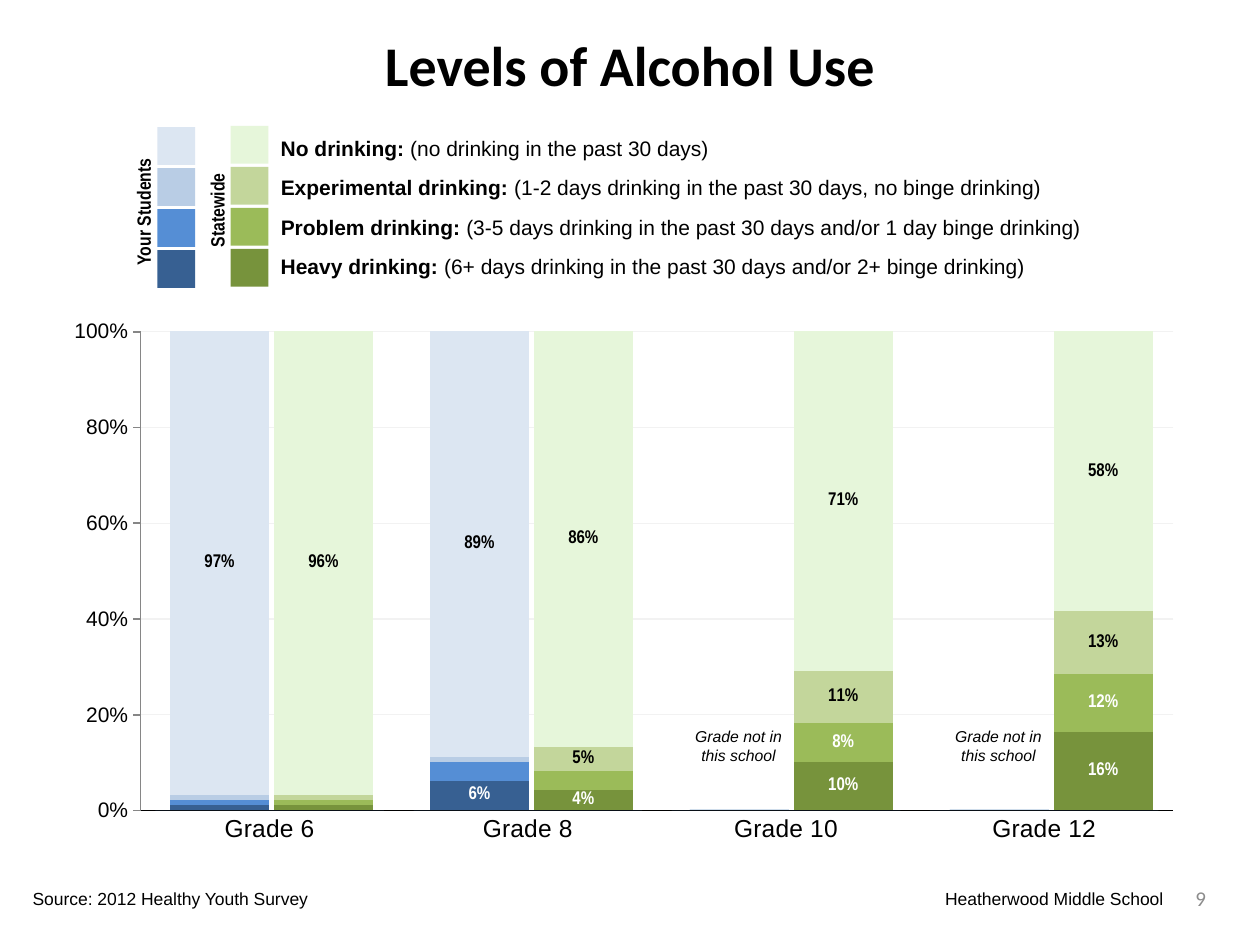
from dataclasses import dataclass

from lxml.etree import SubElement
from pptx import Presentation
from pptx.chart.data import CategoryChartData
from pptx.dml.color import RGBColor
from pptx.enum.chart import XL_CHART_TYPE, XL_LABEL_POSITION, XL_TICK_LABEL_POSITION, XL_TICK_MARK
from pptx.enum.shapes import MSO_SHAPE
from pptx.enum.text import MSO_ANCHOR, PP_ALIGN
from pptx.oxml import parse_xml
from pptx.oxml.ns import nsdecls, qn
from pptx.util import Inches, Pt

CELL = Inches(0.1)


@dataclass(frozen=True)
class Theme:
    ink: str = "000000"
    paper: str = "FFFFFF"
    grid: str = "F2F2F2"
    axis: str = "868686"
    number: str = "8C8C8C"
    heading: str = "Calibri"
    body: str = "Arial"
    narrow: str = "Arial Narrow"
    title_size: float = 32
    category_size: float = 14
    text_size: float = 12
    group_size: float = 11
    label_size: float = 10.5
    footer_size: float = 10
    remark_size: float = 9


@dataclass(frozen=True)
class Area:
    column: float
    row: float
    columns: float
    rows: float

    def bounds(self):
        return [int(n * CELL) for n in (self.column, self.row, self.columns, self.rows)]


@dataclass(frozen=True)
class Level:
    name: str
    meaning: str
    students: str
    statewide: str
    label: str
    label_from: float
    width: float


@dataclass(frozen=True)
class Group:
    name: str
    column: float
    row: float
    caption: Area
    shade: str


@dataclass(frozen=True)
class Grade:
    name: str
    statewide: tuple[float, ...]
    students: tuple[float, ...] = (0, 0, 0, 0)


THEME = Theme()
LEVELS = (
    Level("No drinking: ", "(no drinking in the past 30 days)",
          "DCE6F2", "E6F6DA", THEME.ink, 0.04, 36.3),
    Level("Experimental drinking: ", "(1-2 days drinking in the past 30 days, no binge drinking)",
          "B9CDE5", "C3D69B", THEME.ink, 0.04, 62.9),
    Level("Problem drinking: ", "(3-5 days drinking in the past 30 days and/or 1 day binge drinking)",
          "558ED5", "9BBB59", THEME.paper, 0.05, 66.1),
    Level("Heavy drinking: ", "(6+ days drinking in the past 30 days and/or 2+ binge drinking)",
          "376092", "77933C", THEME.paper, 0.04, 61.6),
)
GROUPS = (
    Group("Your Students", 12.5, 10.1, Area(6.1, 15.3, 10.6, 2.9), "students"),
    Group("Statewide", 18.3, 10, Area(13.3, 15.2, 7.9, 2.9), "statewide"),
)
GRADES = (
    Grade("Grade 6", (0.96, 0.01, 0.01, 0.01), (0.97, 0.01, 0.01, 0.01)),
    Grade("Grade 8", (0.86, 0.05, 0.04, 0.04), (0.89, 0.01, 0.04, 0.06)),
    Grade("Grade 10", (0.71, 0.11, 0.08, 0.10)),
    Grade("Grade 12", (0.58, 0.13, 0.12, 0.16)),
)
FIRST_BAR, BAR_PITCH = 13.3, 20.63


def style_font(font, size: float, face: str, color: str = THEME.ink, bold=False, italic=False):
    font.size, font.name, font.bold, font.italic = Pt(size), face, bold, italic
    font.color.rgb = RGBColor.from_string(color)


def write(shape, text: str, lead="", size=THEME.text_size, face=THEME.body, color=THEME.ink,
          bold=False, italic=False, align=PP_ALIGN.LEFT, anchor=MSO_ANCHOR.TOP, wrap=False):
    frame = shape.text_frame
    frame.word_wrap, frame.vertical_anchor = wrap, anchor
    paragraph = frame.paragraphs[0]
    paragraph.alignment = align
    for words, strong in ((lead, True), (text, bold)):
        if words:
            run = paragraph.add_run()
            run.text = words
            style_font(run.font, size, face, color, strong, italic)
    return shape


def add_text(slide, area: Area, text: str, **style):
    return write(slide.shapes.add_textbox(*area.bounds()), text, **style)


def fill_solid(fill, color: str):
    fill.solid()
    fill.fore_color.rgb = RGBColor.from_string(color)


def add_stack(slide, area: Area, categories, series, gap: int, layout):
    data = CategoryChartData(number_format="0%")
    data.categories = categories
    for name, values in series:
        data.add_series(name, values)
    chart = slide.shapes.add_chart(XL_CHART_TYPE.COLUMN_STACKED_100, *area.bounds(), data).chart
    chart.has_legend = chart.has_title = False
    style_font(chart.font, THEME.footer_size, THEME.heading)
    plot = chart.plots[0]
    plot.gap_width, plot.overlap, plot.vary_by_categories = gap, 100, False
    scale = chart.value_axis
    scale.minimum_scale, scale.maximum_scale, scale.major_unit = 0, 1, 0.2
    chart.category_axis.major_tick_mark = XL_TICK_MARK.NONE
    space = chart.element
    space.find(qn("c:chart")).addnext(parse_xml(
        f"<c:spPr {nsdecls('c', 'a')}><a:noFill/><a:ln><a:noFill/></a:ln></c:spPr>"))
    plot_area = space.find(".//" + qn("c:plotArea"))
    for old in plot_area.findall(qn("c:layout")):
        plot_area.remove(old)
    placement = parse_xml(f"<c:layout {nsdecls('c')}><c:manualLayout/></c:layout>")
    plot_area.insert(0, placement)
    settings = zip(("layoutTarget", "xMode", "yMode", "x", "y", "w", "h"),
                   ("inner", "edge", "edge", *layout))
    for tag, value in settings:
        SubElement(placement[0], qn(f"c:{tag}")).set("val", str(value))
    return chart


def add_frame(slide):
    chart = add_stack(slide, Area(5.9, 25, 87.4, 43), [g.name for g in GRADES],
                      [("Series 1", [0] * len(GRADES))], 13, (0.06, 0.031, 0.938, 0.884))
    grades, scale = chart.category_axis, chart.value_axis
    style_font(grades.tick_labels.font, THEME.category_size, THEME.body)
    style_font(scale.tick_labels.font, THEME.text_size, THEME.body)
    scale.tick_labels.number_format = "0%"
    scale.tick_labels.number_format_is_linked = False
    scale.major_tick_mark = XL_TICK_MARK.OUTSIDE
    scale.has_major_gridlines = True
    lines = ((grades.format.line, THEME.ink, 1), (scale.format.line, THEME.axis, 1),
             (scale.major_gridlines.format.line, THEME.grid, 0.75))
    for line, color, width in lines:
        line.color.rgb, line.width = RGBColor.from_string(color), Pt(width)


def add_grade(slide, position: int, grade: Grade):
    stack = list(zip(LEVELS, grade.statewide, grade.students))[::-1]
    series = [(f"Series {n}", pair) for n, (_, *pair) in enumerate(stack, 1)]
    area = Area(FIRST_BAR + position * BAR_PITCH, 25.5, 16.5, 40.5)
    chart = add_stack(slide, area, ["1", "2"], series, 5, (0, 0.02, 1, 0.937))
    chart.category_axis.reverse_order = True
    chart.value_axis.has_major_gridlines = False
    chart.value_axis.major_tick_mark = XL_TICK_MARK.NONE
    for axis in (chart.category_axis, chart.value_axis):
        axis.tick_label_position = XL_TICK_LABEL_POSITION.NONE
        axis.format.line.fill.background()
    for bars, (level, *_) in zip(chart.plots[0].series, stack):
        fill_solid(bars.format.fill, level.students)
        fill_solid(bars.points[0].format.fill, level.statewide)
        labels = bars.data_labels
        labels.show_value = True
        labels.position = XL_LABEL_POSITION.CENTER
        labels.number_format = f'[<{level.label_from}]" ";0%'
        labels.number_format_is_linked = False
        style_font(labels.font, THEME.label_size, THEME.narrow, level.label, bold=True)


def add_legend(slide):
    for group in GROUPS:
        add_text(slide, group.caption, group.name, size=THEME.group_size,
                 face=THEME.narrow, bold=True).rotation = 270
        for n, level in enumerate(LEVELS):
            area = Area(group.column, group.row + n * 3.25, 3, 3)
            swatch = slide.shapes.add_shape(MSO_SHAPE.RECTANGLE, *area.bounds())
            swatch.shadow.inherit = False
            fill_solid(swatch.fill, getattr(level, group.shade))
            swatch.line.fill.background()
    for n, level in enumerate(LEVELS):
        add_text(slide, Area(21.3, 10.3 + n * 3.1, level.width, 3), level.meaning, lead=level.name)


def add_remark(slide, position: int):
    area = Area(FIRST_BAR + 0.3 + position * BAR_PITCH, 46.7, 7.5, 15)
    remark = add_text(slide, area, "Grade not in this school", size=THEME.remark_size, italic=True,
                      align=PP_ALIGN.CENTER, anchor=MSO_ANCHOR.BOTTOM, wrap=True)
    frame = remark.text_frame
    frame.margin_left = frame.margin_right = frame.margin_top = 0
    frame.margin_bottom = CELL


def main():
    deck = Presentation()
    deck.slide_width, deck.slide_height = 100 * CELL, 75 * CELL
    slide = deck.slides.add_slide(deck.slide_layouts[5])
    title = slide.shapes.title
    title.left, title.top, title.width, title.height = Area(2.5, 1.7, 95, 6.7).bounds()
    write(title, "Levels of Alcohol Use", size=THEME.title_size, face=THEME.heading, bold=True,
          align=PP_ALIGN.CENTER, anchor=MSO_ANCHOR.MIDDLE, wrap=True)
    add_frame(slide)
    for position, grade in enumerate(GRADES):
        add_grade(slide, position, grade)
        if not any(grade.students):
            add_remark(slide, position)
    add_legend(slide)
    add_text(slide, Area(1.6, 70, 24.2, 2.7), "Source: 2012 Healthy Youth Survey",
             size=THEME.footer_size)
    add_text(slide, Area(32.5, 70, 60.8, 2.7), "Heatherwood Middle School",
             size=THEME.footer_size, align=PP_ALIGN.RIGHT)
    add_text(slide, Area(91.7, 69.3, 5, 4), "9", face=THEME.heading, color=THEME.number,
             align=PP_ALIGN.RIGHT, anchor=MSO_ANCHOR.MIDDLE, wrap=True)
    deck.save("out.pptx")


if __name__ == "__main__":
    main()
